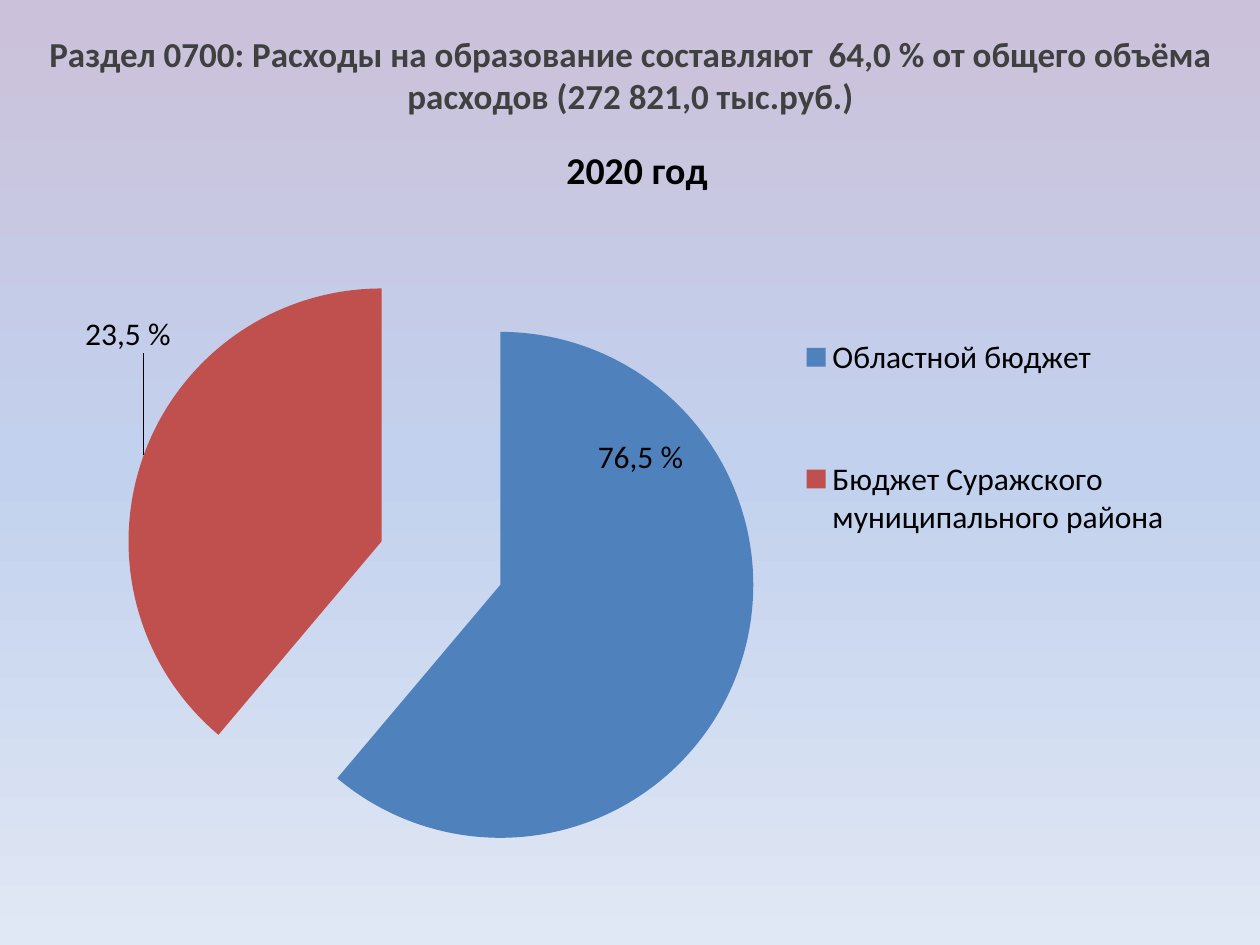
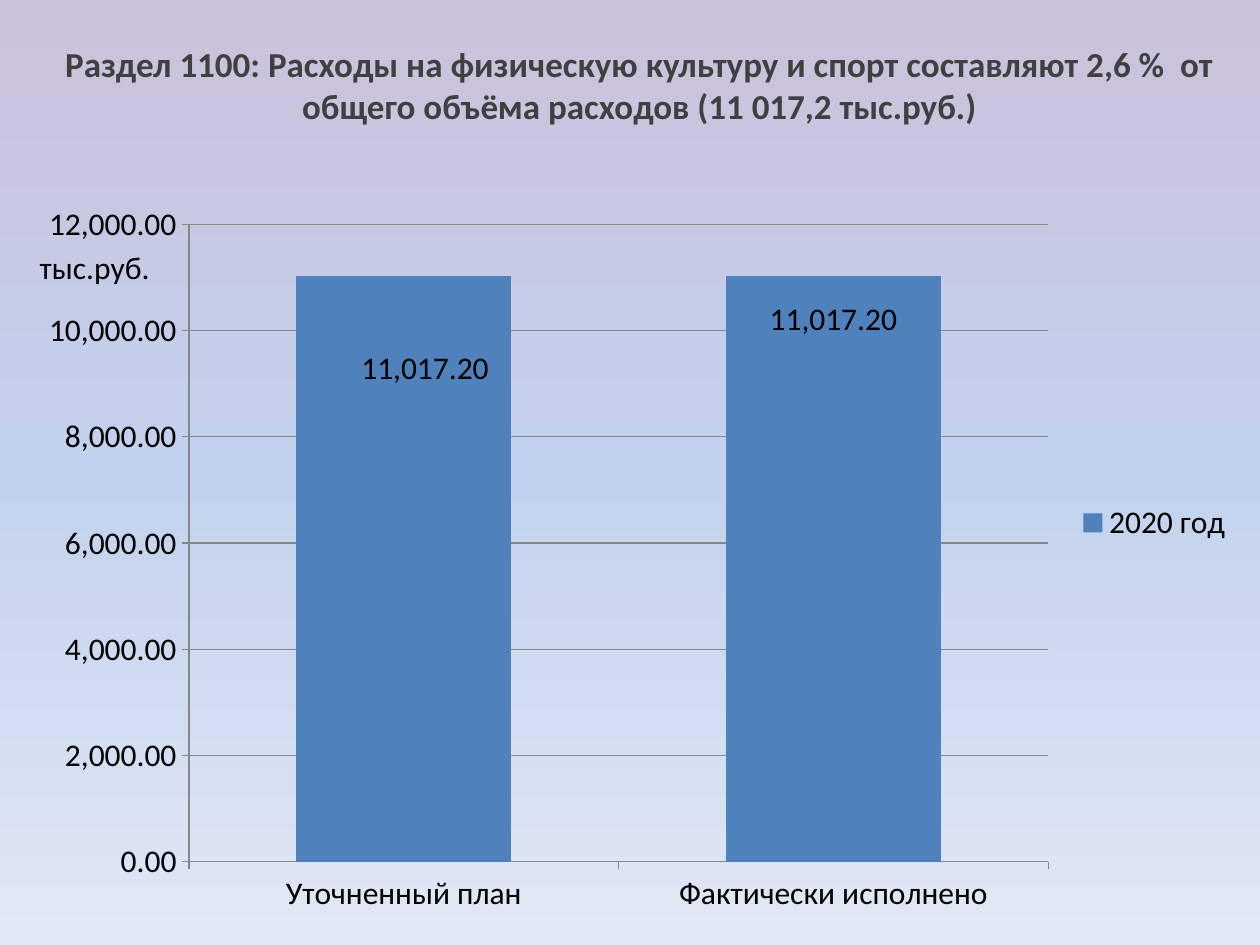
from copy import deepcopy

from pptx import Presentation
from pptx import util as u
from pptx.chart.data import CategoryChartData
from pptx.dml.color import RGBColor
from pptx.enum import chart as ch
from pptx.enum import text
from pptx.oxml import parse_xml
from pptx.oxml.ns import nsdecls, qn

WIDE, HIGH = 10, 7.5
FONT = "Calibri"
BLACK, GRAY, DARK = "000000", "878787", "404040"
BLUE, RED = "4F81BD", "C0504D"
SKY = [(0, "CCC1DA"), (0.5, "C2D1ED"), (1, "E1E8F5")]
FRAME = (0.2, 0.92, 9.69, 6.46)
YEAR = "2020 год"
MONEY = "#,##0.00"


def tint(code):
    return RGBColor.from_string(code)


def style(font, size, code, bold=False):
    font.name, font.size, font.bold = FONT, u.Pt(size), bold
    font.color.rgb = tint(code)


def paint(part, code):
    part.fill.solid()
    part.fill.fore_color.rgb = tint(code)


def add_run(para, words, size, code, bold=False):
    run = para.add_run()
    run.text = words
    style(run.font, size, code, bold)


def add_slide(prs):
    """Blank slide with the shared gradient."""
    page = prs.slides.add_slide(prs.slide_layouts[6])
    fill = page.background.fill
    fill.gradient()
    fill.gradient_angle = 270
    last = page.element.xpath(".//a:gs")[-1]
    last.addnext(deepcopy(last))
    for stop, (place, code) in zip(fill.gradient_stops, SKY):
        stop.position = place
        stop.color.rgb = tint(code)
    return page


def add_head(page, left, top, words):
    box = page.shapes.add_textbox(*map(u.Inches, (left, top, 9.45, 0.55)))
    box.text_frame.word_wrap = True
    para = box.text_frame.paragraphs[0]
    para.alignment = text.PP_ALIGN.CENTER
    add_run(para, words, 20, DARK, True)


def lay(part, slot, sizes, modes=""):
    """Give a chart part a manual layout; sizes are shares of the chart."""
    for old in part.findall(qn("c:layout")):
        part.remove(old)
    rows = modes + "".join(
        f'<c:{key} val="{size:.4f}"/>' for key, size in zip("xywh", sizes))
    part.insert(slot, parse_xml(
        f'<c:layout {nsdecls("c")}><c:manualLayout>{rows}'
        "</c:manualLayout></c:layout>"))


def pin(part, slot, *box, inner=False):
    """Fix a chart part at a box given in inches on the slide."""
    left, top, wide, high = FRAME
    shares = [(box[0] - left) / wide, (box[1] - top) / high]
    if box[2:]:
        shares += [box[2] / wide, box[3] / high]
    modes = '<c:layoutTarget val="inner"/>' if inner else ""
    modes += '<c:xMode val="edge"/><c:yMode val="edge"/>'
    lay(part, slot, shares, modes)


def add_chart(page, kind, names, vals, form, plot, key):
    """Chart with the shared frame, font, legend and plot area."""
    data = CategoryChartData(number_format=form)
    data.categories = names
    data.add_series(YEAR, vals)
    chart = page.shapes.add_chart(kind, *map(u.Inches, FRAME), data).chart
    style(chart.font, 18, BLACK)
    chart.has_legend = True
    chart.legend.position = ch.XL_LEGEND_POSITION.CORNER
    chart.legend.include_in_layout = False
    pin(chart.legend._element, 1, *key)
    pin(chart._chartSpace.chart.plotArea, 0, *plot, inner=True)
    return chart


def add_title(chart, words, size, bold, left, top):
    chart.has_title = True
    add_run(chart.chart_title.text_frame.paragraphs[0], words, size, BLACK, bold)
    pin(chart.chart_title._element, 1, left, top)


def add_tags(chart, moves, words=(), lines=False):
    """Centred value labels, each moved by inches; words replace values."""
    row = chart.plots[0].series[0]
    row.data_labels.show_value = True
    for i in range(len(moves)):
        tag = row.points[i].data_label
        if words:
            add_run(tag.text_frame.paragraphs[0], words[i], 18, BLACK)
        tag.position = ch.XL_LABEL_POSITION.CENTER
    for node, (x, y) in zip(chart._chartSpace.xpath(".//c:dLbl"), moves):
        lay(node, 1, (x / FRAME[2], y / FRAME[3]))
    for node in chart._chartSpace.xpath(".//c:showLeaderLines"):
        node.set("val", str(int(lines)))


def add_pie(page):
    names = ["Областной бюджет", "Бюджет Суражского муниципального района"]
    chart = add_chart(page, ch.XL_CHART_TYPE.PIE, names, (76.5, 48.6),
                      "General", (0.99, 1.96, 5.02, 5.02),
                      (6.27, 2.02, 3.1, 2.9))
    add_title(chart, YEAR, 21.6, True, 4.44, 1.08)
    chart.plots[0].vary_by_categories = True
    row = chart.plots[0].series[0]
    for i, code in enumerate((BLUE, RED)):
        paint(row.points[i].format, code)
    row._element.find(qn("c:dPt")).addprevious(
        parse_xml(f'<c:explosion {nsdecls("c")} val="25"/>'))
    add_tags(chart, [(0.17, -1.36), (-1.07, -1.3)], ["76,5 %", "23,5 %"], True)


def add_bars(page):
    names = ["Уточненный план", "Фактически исполнено"]
    chart = add_chart(page, ch.XL_CHART_TYPE.COLUMN_CLUSTERED, names,
                      (11017.2, 11017.2), MONEY, (1.5, 1.78, 6.82, 5.06),
                      (8.63, 0.91, 1.25, 0.4))
    add_title(chart, "тыс.руб.", 18, False, 0.27, 1.9)
    plot = chart.plots[0]
    plot.vary_by_categories = False
    plot.gap_width = 100
    paint(plot.series[0].format, BLUE)
    labels = plot.series[0].data_labels
    labels.number_format = MONEY
    labels.number_format_is_linked = False
    add_tags(chart, [(0.17, -1.59), (0, -1.98)])
    # Axes
    axis = chart.value_axis
    axis.minimum_scale, axis.maximum_scale, axis.major_unit = 0, 12000, 2000
    axis.tick_labels.number_format = MONEY
    axis.tick_labels.number_format_is_linked = False
    axis.has_major_gridlines = True
    for part in (axis, axis.major_gridlines, chart.category_axis):
        part.format.line.color.rgb = tint(GRAY)
        part.format.line.width = u.Pt(0.75)


def main():
    prs = Presentation()
    prs.slide_width, prs.slide_height = u.Inches(WIDE), u.Inches(HIGH)

    # Education
    page = add_slide(prs)
    add_head(page, 0.28, 0.21,
             "Раздел 0700: Расходы на образование составляют  64,0 % "
             "от общего объёма расходов (272 821,0 тыс.руб.)")
    add_pie(page)

    # Sport
    page = add_slide(prs)
    add_head(page, 0.35, 0.29,
             "Раздел 1100: Расходы на физическую культуру и спорт составляют "
             "2,6 %  от общего объёма расходов (11 017,2 тыс.руб.)")
    add_bars(page)

    prs.save("out.pptx")


if __name__ == "__main__":
    main()
